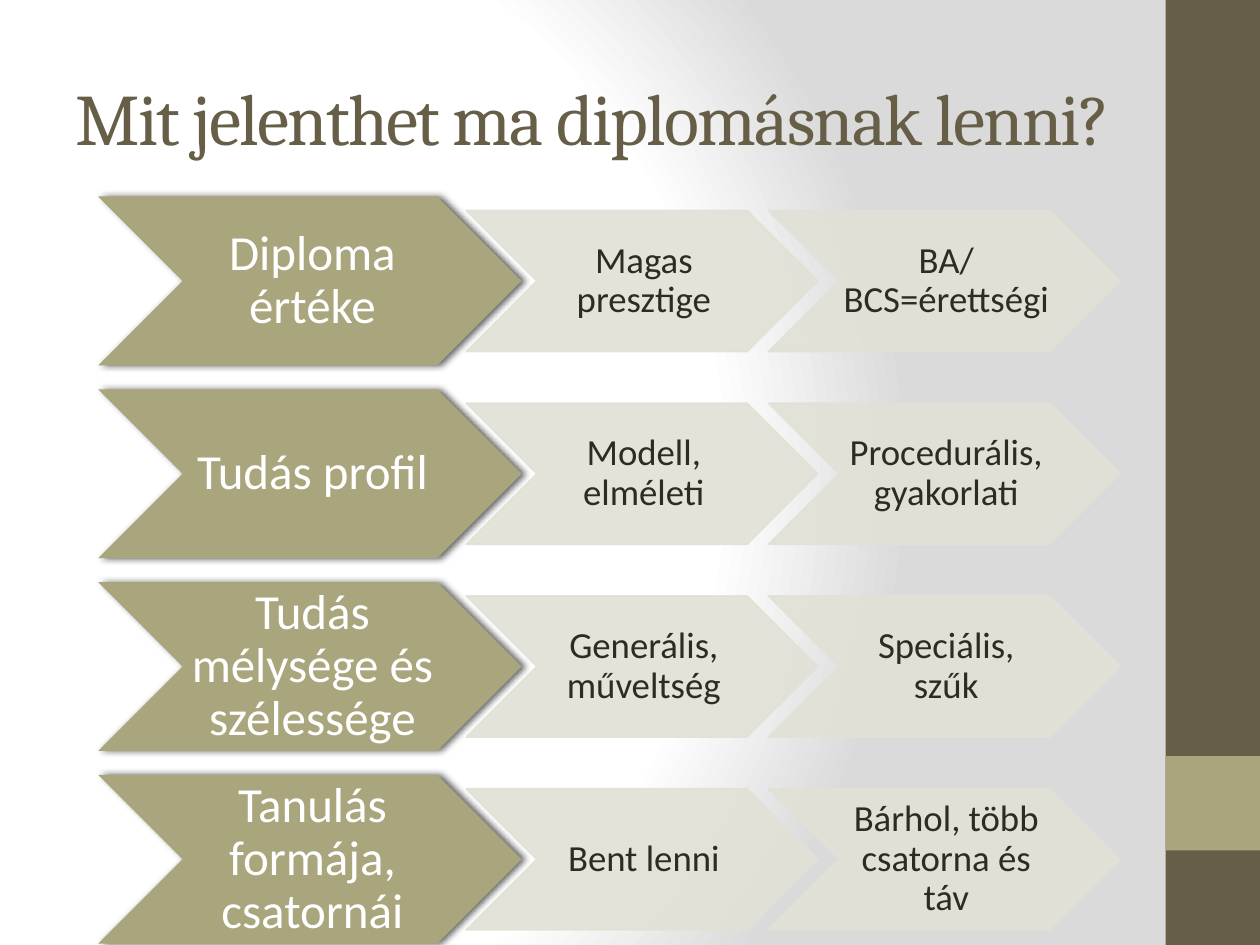
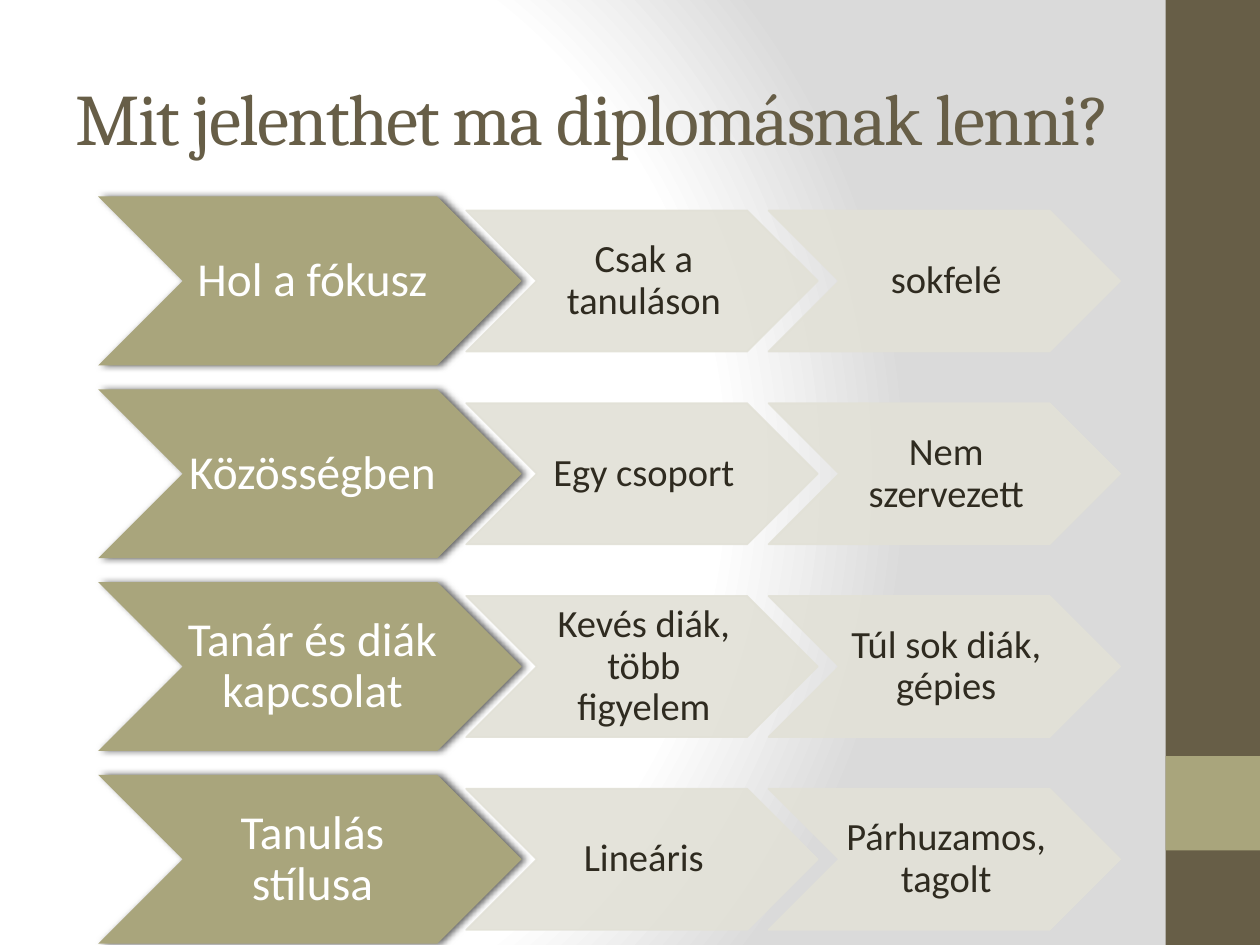
from dataclasses import dataclass

from pptx import Presentation
from pptx.dml.color import RGBColor as RGB
from pptx.enum.shapes import MSO_SHAPE as Geo
from pptx.enum.text import MSO_ANCHOR as Anchor, MSO_AUTO_SIZE as Fit, PP_ALIGN as Align
from pptx.oxml import parse_xml
from pptx.oxml.ns import nsdecls, qn
from pptx.util import Inches, Pt


@dataclass(frozen=True)
class Theme:
    brown: str = "675E47"
    olive: str = "A9A57C"
    pale: str = "E2E1D7"
    ink: str = "2F2B20"
    white: str = "FFFFFF"
    grey: str = "DADADA"
    head: str = "Cambria"
    body: str = "Calibri"
    title: float = 41.4


theme = Theme()


def style(frame, font, size, color, align):
    """Set the look of a frame that holds one paragraph."""
    frame.word_wrap = True
    frame.auto_size = Fit.NONE
    frame.vertical_anchor = Anchor.MIDDLE
    para = frame.paragraphs[0]
    para.alignment = align
    run = para.runs[0]
    run.font.name = font
    run.font.size = Pt(size)
    run.font.color.rgb = RGB.from_string(color)
    return para


def block(slide, geo, box, color):
    """Add a plain filled shape; box is left, top, width, height."""
    shape = slide.shapes.add_shape(geo, *[Inches(v) for v in box])
    shape.shadow.inherit = False
    shape.fill.solid()
    shape.fill.fore_color.rgb = RGB.from_string(color)
    shape.line.fill.background()
    return shape


# Wording: title, lead size, step size, rows
title = "Mit jelenthet ma diplomásnak lenni?"
pages = [
    (28, 21, [
        ("Diploma értéke", "Magas presztige", "BA/BCS=érettségi"),
        ("Tudás profil", "Modell, elméleti", "Procedurális, gyakorlati"),
        ("Tudás mélysége és szélessége", "Generális, műveltség", "Speciális, szűk"),
        ("Tanulás formája, csatornái", "Bent lenni", "Bárhol, több csatorna és táv"),
    ]),
    (27, 22, [
        ("Hol a fókusz", "Csak a tanuláson", "sokfelé"),
        ("Közösségben", "Egy csoport", "Nem szervezett"),
        ("Tanár és diák kapcsolat", "Kevés diák, több figyelem", "Túl sok diák, gépies"),
        ("Tanulás stílusa", "Lineáris", "Párhuzamos, tagolt"),
    ]),
]

# Chevron grid: left, drop from row top, width, height, inset
cols = [(0.78, 0, 3.36, 1.34, 0.04), (3.7, 0.11, 2.79, 1.12, 0.03), (6.1, 0.11, 2.79, 1.12, 0.03)]
top, pitch = 1.56, 1.53

deck = Presentation()
deck.slide_width, deck.slide_height = Inches(10), Inches(7.5)
master = deck.slide_master

# Shared background
master.background.fill.gradient()
old = next(master.element.iter(qn("a:gradFill")))
stops = "".join(
    f'<a:gs pos="{pos * 1000}"><a:srgbClr val="{color}"/></a:gs>'
    for pos, color in [(0, theme.white), (75, theme.white), (100, theme.grey)])
old.getparent().replace(old, parse_xml(
    f'<a:gradFill {nsdecls("a")} rotWithShape="1"><a:gsLst>{stops}</a:gsLst><a:path path="circle">'
    '<a:fillToRect l="20000" t="50000" r="100000" b="50000"/></a:path></a:gradFill>'))

for page, (lead, step, rows) in enumerate(pages):
    slide = deck.slides.add_slide(deck.slide_layouts[5])

    # Side bands, moved to the master once
    if page == 0:
        for y, high, color in [(0, 7.5, theme.brown), (6, 0.75, theme.olive)]:
            band = block(slide, Geo.RECTANGLE, (9.25, y, 0.75, high), color)
            master.shapes.element.append(band.element)

    # Title
    head = slide.shapes.title
    head.left, head.top = Inches(0.5), Inches(0.3)
    head.width, head.height = Inches(8.75), Inches(1.25)
    head.text_frame.text = title
    para = style(head.text_frame, theme.head, theme.title, theme.brown, Align.LEFT)
    para.runs[0].font._element.set("spc", "-100")

    # Rows of chevrons
    for row, words in enumerate(rows):
        for col, (text, (x, drop, wide, high, inset)) in enumerate(zip(words, cols)):
            first = col == 0
            box = (x, top + row * pitch + drop, wide, high)
            arrow = block(slide, Geo.CHEVRON, box, theme.olive if first else theme.pale)
            props = arrow.element.spPr
            if first:
                glow = props.find(qn("a:effectLst"))
                glow.append(parse_xml(
                    f'<a:outerShdw {nsdecls("a")} blurRad="{Pt(4)}" dist="{Pt(2)}" dir="0" rotWithShape="0">'
                    '<a:srgbClr val="000000"><a:alpha val="60000"/></a:srgbClr></a:outerShdw>'))
            else:
                arrow.line.color.rgb = RGB.from_string(theme.pale)
                arrow.line.width = Pt(1)
                for tint in props.iter(qn("a:srgbClr")):
                    tint.append(parse_xml(f'<a:alpha {nsdecls("a")} val="90000"/>'))

            frame = arrow.text_frame
            frame.text = text
            frame.margin_left, frame.margin_right = Inches(inset), 0
            frame.margin_top = frame.margin_bottom = Inches(0.02)
            para = style(frame, theme.body, lead if first else step,
                         theme.white if first else theme.ink, Align.CENTER)
            para.line_spacing = 0.9

deck.save("out.pptx")
